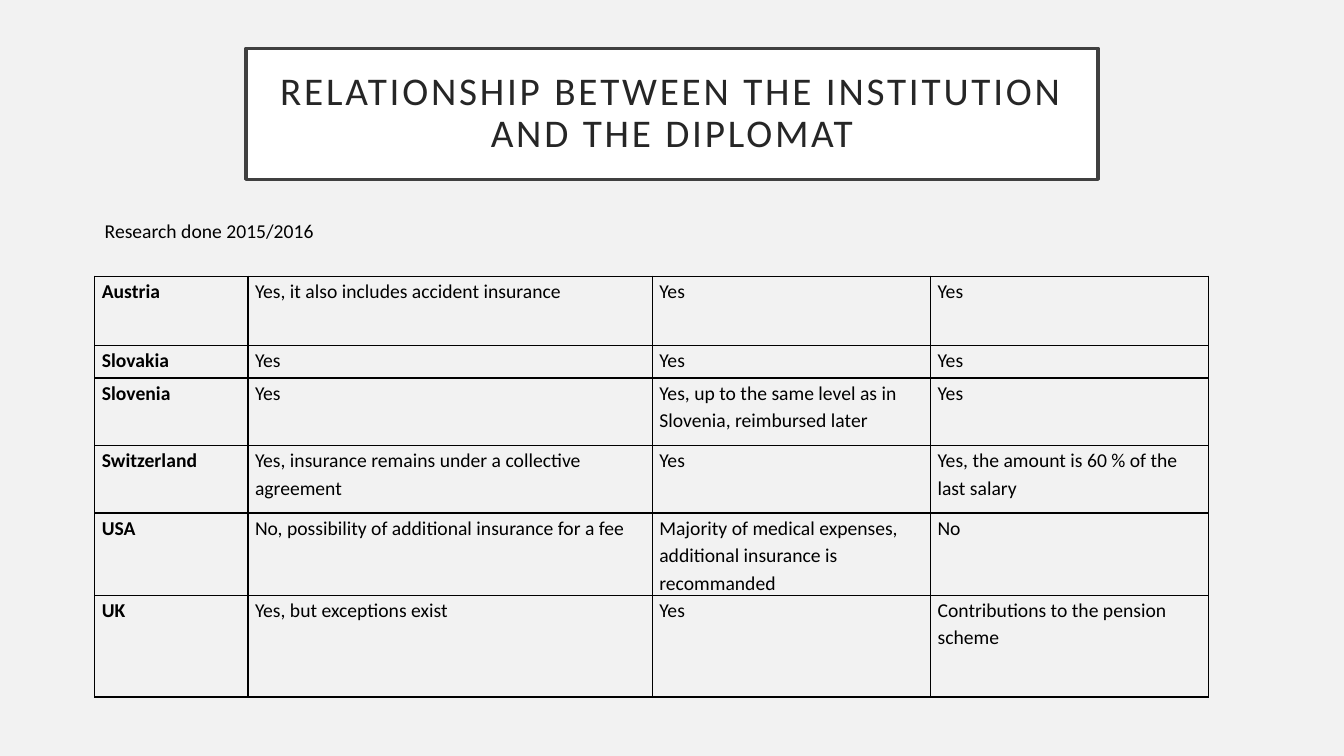
from lxml.etree import SubElement
from pptx import Presentation
from pptx.dml.color import RGBColor
from pptx.enum.shapes import MSO_SHAPE
from pptx.enum.text import MSO_ANCHOR, PP_ALIGN
from pptx.oxml.ns import qn
from pptx.util import Inches, Pt

# Content
TITLE = "RELATIONSHIP BETWEEN THE INSTITUTION AND THE DIPLOMAT"
NOTE = "Research done 2015/2016"
COL_WIDTHS = [1.52, 4.01, 2.76, 2.76]
ROWS = [  # height, cells
    (0.69, ["Austria", "Yes, it also includes accident insurance", "Yes", "Yes"]),
    (0.32, ["Slovakia", "Yes", "Yes", "Yes"]),
    (0.67, ["Slovenia", "Yes",
            "Yes, up to the same level as in Slovenia, reimbursed later", "Yes"]),
    (0.67, ["Switzerland", "Yes, insurance remains under a collective agreement",
            "Yes", "Yes, the amount is 60 % of the last salary"]),
    (0.67, ["USA", "No, possibility of additional insurance for a fee",
            "Majority of medical expenses, additional insurance is recommanded", "No"]),
    (1.01, ["UK", "Yes, but exceptions exist", "Yes",
            "Contributions to the pension scheme"]),
]
THEME = {
    "font": "Calibri", "title_size": 28, "body_size": 14,
    "back": "F2F2F2", "box": "FFFFFF", "frame": "404040",
    "title": "262626", "text": "000000", "border": "000000",
}


def color(name):
    return RGBColor.from_string(THEME[name])


def write(tf, text, size="body_size", ink="text", bold=False, align=PP_ALIGN.LEFT,
          line=None, after=None, spacing=None):
    tf.word_wrap = True
    p = tf.paragraphs[0]
    p.alignment = align
    if line is not None:
        p.line_spacing = line
    if after is not None:
        p.space_after = Pt(after)
    r = p.add_run()
    r.text = text
    r.font.name, r.font.size, r.font.bold = THEME["font"], Pt(THEME[size]), bold
    r.font.color.rgb = color(ink)
    if spacing is not None:
        r.font._element.set("spc", str(spacing * 100))


def add_borders(cell):
    # Border lines come before the fill in the cell properties
    tcPr = cell._tc.get_or_add_tcPr()
    for i, side in enumerate(("lnL", "lnR", "lnT", "lnB")):
        ln = SubElement(tcPr, qn(f"a:{side}"), w=str(Pt(1)))
        fill = SubElement(ln, qn("a:solidFill"))
        SubElement(fill, qn("a:srgbClr"), val=THEME["border"])
        tcPr.insert(i, ln)


def main():
    prs = Presentation()
    prs.slide_width, prs.slide_height = Inches(13.33), Inches(7.5)
    s = prs.slides.add_slide(prs.slide_layouts[6])
    s.background.fill.solid()
    s.background.fill.fore_color.rgb = color("back")

    # Framed title
    sp = s.shapes.add_shape(MSO_SHAPE.RECTANGLE, Inches(2.44), Inches(0.48),
                            Inches(8.45), Inches(1.3))
    sp.shadow.inherit = False
    sp.fill.solid()
    sp.fill.fore_color.rgb = color("box")
    sp.line.color.rgb = color("frame")
    sp.line.width = Pt(2.5)
    tf = sp.text_frame
    tf.margin_left = tf.margin_right = tf.margin_top = tf.margin_bottom = Inches(0.2)
    tf.vertical_anchor = MSO_ANCHOR.MIDDLE
    write(tf, TITLE, size="title_size", ink="title", align=PP_ALIGN.CENTER,
          line=0.9, spacing=2)

    # Country table
    table = s.shapes.add_table(len(ROWS), len(COL_WIDTHS), Inches(0.94), Inches(2.74),
                               Inches(sum(COL_WIDTHS)),
                               Inches(sum(h for h, _ in ROWS))).table
    table.first_row = table.horz_banding = False
    for col, width in zip(table.columns, COL_WIDTHS):
        col.width = Inches(width)
    for row, (height, texts) in zip(table.rows, ROWS):
        row.height = Inches(height)
        for i, (cell, text) in enumerate(zip(row.cells, texts)):
            cell.margin_left = cell.margin_right = Inches(0.07)
            cell.margin_top = cell.margin_bottom = 0
            cell.fill.background()
            add_borders(cell)
            write(cell.text_frame, text, bold=i == 0, line=1.15, after=10)

    # Research note
    box = s.shapes.add_textbox(Inches(0.94), Inches(2.12), Inches(4.15), Inches(0.34))
    write(box.text_frame, NOTE)

    prs.save("out.pptx")


if __name__ == "__main__":
    main()
